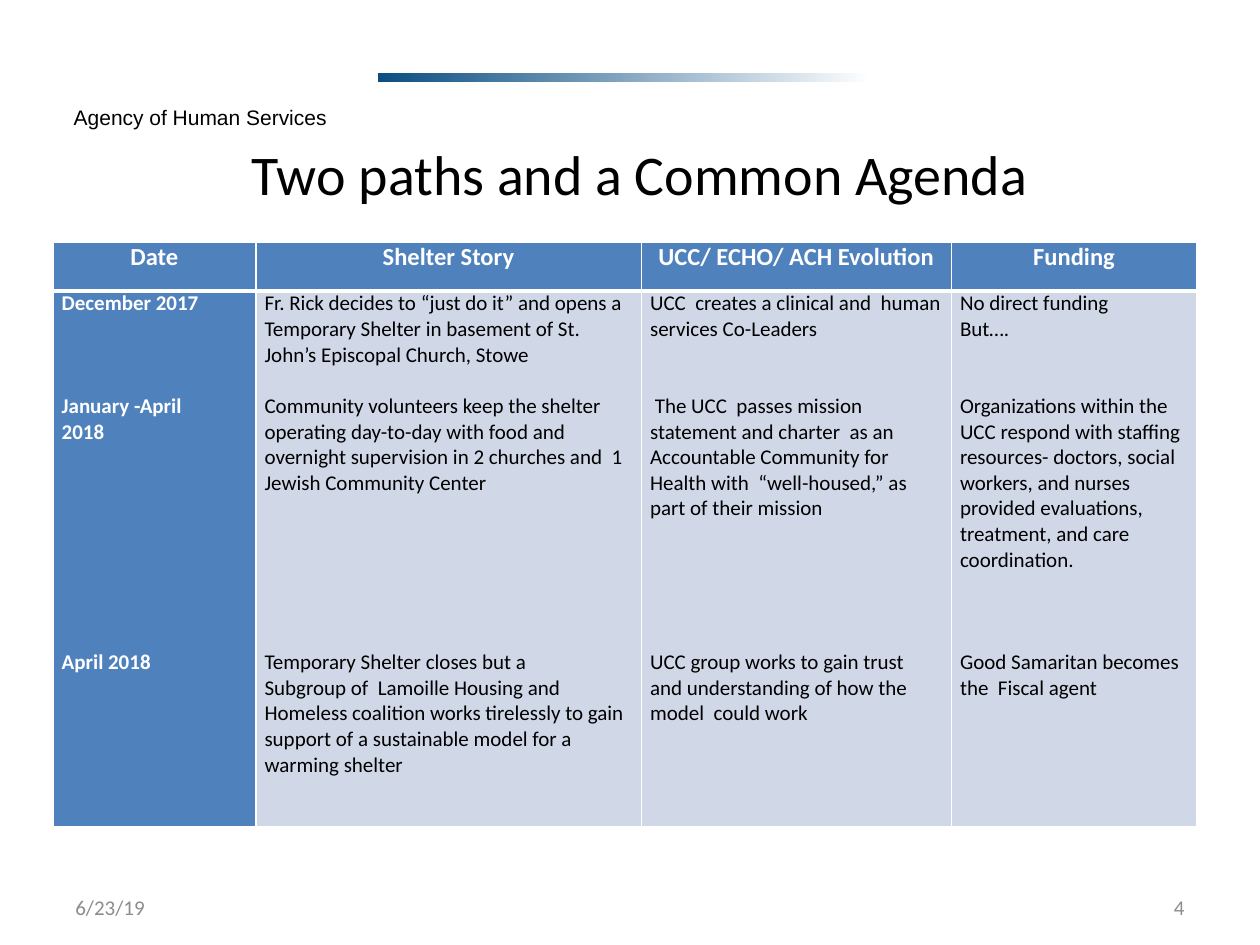
from dataclasses import dataclass

import lxml.etree
import pptx
import pptx.dml.color
import pptx.enum.shapes
import pptx.enum.text
import pptx.oxml.ns
import pptx.util

Inches = pptx.util.Inches
Pt = pptx.util.Pt
Align = pptx.enum.text.PP_ALIGN
Anchor = pptx.enum.text.MSO_ANCHOR


@dataclass(frozen=True)
class Theme:
    body_font: str = "Calibri"
    agency_font: str = "Arial"
    title_size: float = 32
    header_size: float = 14
    body_size: float = 12
    line_height: float = 14.65
    thin_border: float = 1
    thick_border: float = 3
    black: str = "000000"
    white: str = "FFFFFF"
    grey: str = "8C8C8C"
    navy: str = "0A4E81"
    blue: str = "4F81BD"
    pale_blue: str = "D0D8E8"


THEME = Theme()


@dataclass(frozen=True)
class Label:
    text: str
    left: float
    top: float
    width: float
    height: float
    align: Align
    anchor: Anchor = Anchor.TOP
    size: float = THEME.body_size
    font: str = THEME.body_font
    color: str = THEME.black


@dataclass(frozen=True)
class Entry:
    text: str
    lines_before: int = 0


@dataclass(frozen=True)
class Column:
    heading: str
    width: float
    entries: tuple[Entry, ...]


LABELS = (
    Label("Agency of Human Services", 0.18, 0.78, 2.82, 0.3, Align.CENTER, font=THEME.agency_font),
    Label("4", 7.17, 7, 2.33, 0.4, Align.RIGHT, Anchor.MIDDLE, color=THEME.grey),
    Label("6/23/19", 0.5, 7, 2.33, 0.4, Align.LEFT, Anchor.MIDDLE, color=THEME.grey),
    Label("Two paths and a Common Agenda", 0.58, 1.06, 9, 1.25, Align.CENTER, size=THEME.title_size),
)

COLUMNS = (
    Column("Date", 1.61, (
        Entry("December 2017"),
        Entry("January -April", 3),
        Entry("2018"),
        Entry("April 2018", 8),
    )),
    Column("Shelter Story", 3.06, (
        Entry("Fr. Rick decides to “just do it” and opens a Temporary Shelter in basement "
              "of St. John’s Episcopal Church, Stowe"),
        Entry("Community volunteers keep the shelter operating day-to-day with food and "
              "overnight supervision in 2 churches and  1 Jewish Community Center", 1),
        Entry("Temporary Shelter closes but a", 6),
        Entry("Subgroup of  Lamoille Housing and Homeless coalition works tirelessly to gain "
              "support of a sustainable model for a warming shelter"),
    )),
    Column("UCC/ ECHO/ ACH Evolution", 2.46, (
        Entry("UCC  creates a clinical and  human services Co-Leaders"),
        Entry(" The UCC  passes mission statement and charter  as an Accountable Community "
              "for Health with  “well-housed,” as  part of their mission", 2),
        Entry("UCC group works to gain trust  and understanding of how the model  could work", 5),
    )),
    Column("Funding", 1.95, (
        Entry("No direct funding"),
        Entry("But…."),
        Entry("Organizations within the UCC respond with staffing resources- doctors, social "
              "workers, and nurses provided evaluations, treatment, and care coordination.", 2),
        Entry("Good Samaritan becomes  the  Fiscal agent", 3),
    )),
)
ROW_HEIGHTS = (0.39, 4.25)


def rgb(color: str) -> pptx.dml.color.RGBColor:
    return pptx.dml.color.RGBColor.from_string(color)


def format_runs(paragraph, size: float, color: str, font: str = THEME.body_font, bold: bool = False) -> None:
    for run in paragraph.runs:
        run.font.name = font
        run.font.size = Pt(size)
        run.font.bold = bold
        run.font.color.rgb = rgb(color)


def draw_label(slide, label: Label) -> None:
    shape = slide.shapes.add_textbox(
        Inches(label.left), Inches(label.top), Inches(label.width), Inches(label.height))
    text_frame = shape.text_frame
    text_frame.word_wrap = True
    text_frame.vertical_anchor = label.anchor
    text_frame.text = label.text
    paragraph = text_frame.paragraphs[0]
    paragraph.alignment = label.align
    format_runs(paragraph, label.size, label.color, label.font)


def draw_gradient_bar(slide) -> None:
    shape = slide.shapes.add_shape(
        pptx.enum.shapes.MSO_SHAPE.RECTANGLE, Inches(3), Inches(0.58), Inches(3.92), Inches(0.07))
    shape.shadow.inherit = False
    shape.line.fill.background()
    shape.fill.gradient()
    shape.fill.gradient_angle = 0
    for stop, position, color in zip(shape.fill.gradient_stops, (0, 1), (THEME.navy, THEME.white)):
        stop.position = position
        stop.color.rgb = rgb(color)


def style_cell(cell, fill: str, top: float, bottom: float) -> None:
    cell.margin_left = cell.margin_right = Inches(0.07)
    cell.margin_top = cell.margin_bottom = 0
    cell.fill.solid()
    cell.fill.fore_color.rgb = rgb(fill)
    properties = cell._tc.get_or_add_tcPr()
    widths = {"a:lnL": THEME.thin_border, "a:lnR": THEME.thin_border, "a:lnT": top, "a:lnB": bottom}
    for index, (tag, width) in enumerate(widths.items()):
        line = lxml.etree.Element(pptx.oxml.ns.qn(tag), w=str(Pt(width)))
        solid = lxml.etree.SubElement(line, pptx.oxml.ns.qn("a:solidFill"))
        lxml.etree.SubElement(solid, pptx.oxml.ns.qn("a:srgbClr"), val=THEME.white)
        properties.insert(index, line)


def write_entries(cell, entries: tuple[Entry, ...], color: str, bold: bool) -> None:
    cell.text_frame.text = "\n".join(entry.text for entry in entries)
    for paragraph, entry in zip(cell.text_frame.paragraphs, entries):
        if entry.lines_before:
            paragraph.space_before = Pt(round(entry.lines_before * THEME.line_height, 2))
        format_runs(paragraph, THEME.body_size, color, bold=bold)


def draw_timeline(slide, columns: tuple[Column, ...]) -> None:
    total_width = sum(column.width for column in columns)
    table = slide.shapes.add_table(
        len(ROW_HEIGHTS), len(columns), Inches(0.42), Inches(1.92),
        Inches(total_width), Inches(sum(ROW_HEIGHTS))).table
    for row, height in zip(table.rows, ROW_HEIGHTS):
        row.height = Inches(height)
    for index, column in enumerate(columns):
        table.columns[index].width = Inches(column.width)
        header, body = table.cell(0, index), table.cell(1, index)
        header.text_frame.text = column.heading
        paragraph = header.text_frame.paragraphs[0]
        paragraph.alignment = Align.CENTER
        format_runs(paragraph, THEME.header_size, THEME.white, bold=True)
        style_cell(header, THEME.blue, THEME.thin_border, THEME.thick_border)
        is_date = index == 0
        write_entries(body, column.entries, THEME.white if is_date else THEME.black, is_date)
        style_cell(body, THEME.blue if is_date else THEME.pale_blue, THEME.thick_border, THEME.thin_border)


def main() -> None:
    presentation = pptx.Presentation()
    presentation.slide_width = Inches(10)
    presentation.slide_height = Inches(7.5)
    slide = presentation.slides.add_slide(presentation.slide_layouts[6])
    draw_gradient_bar(slide)
    for label in LABELS:
        draw_label(slide, label)
    draw_timeline(slide, COLUMNS)
    presentation.save("out.pptx")


if __name__ == "__main__":
    main()
